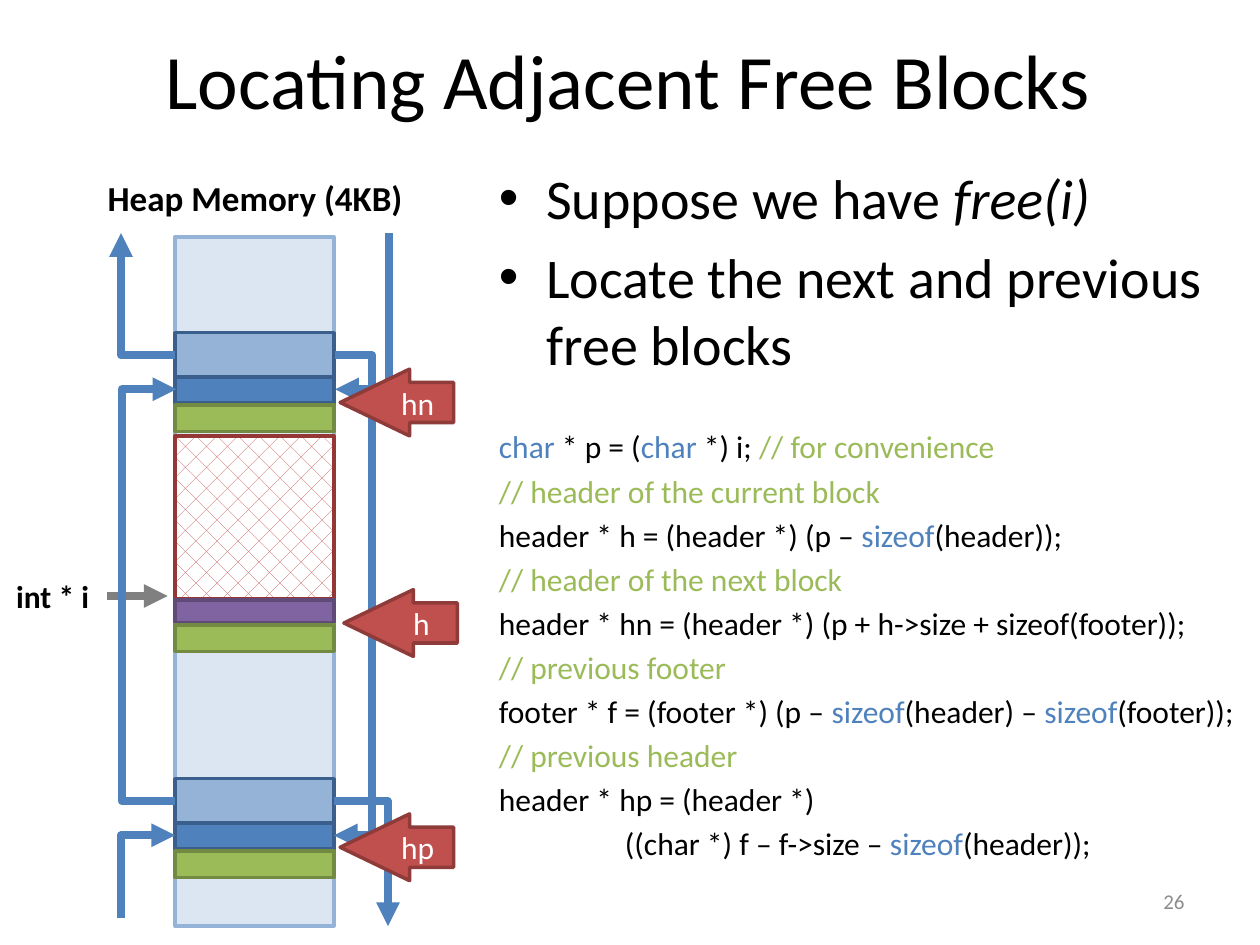
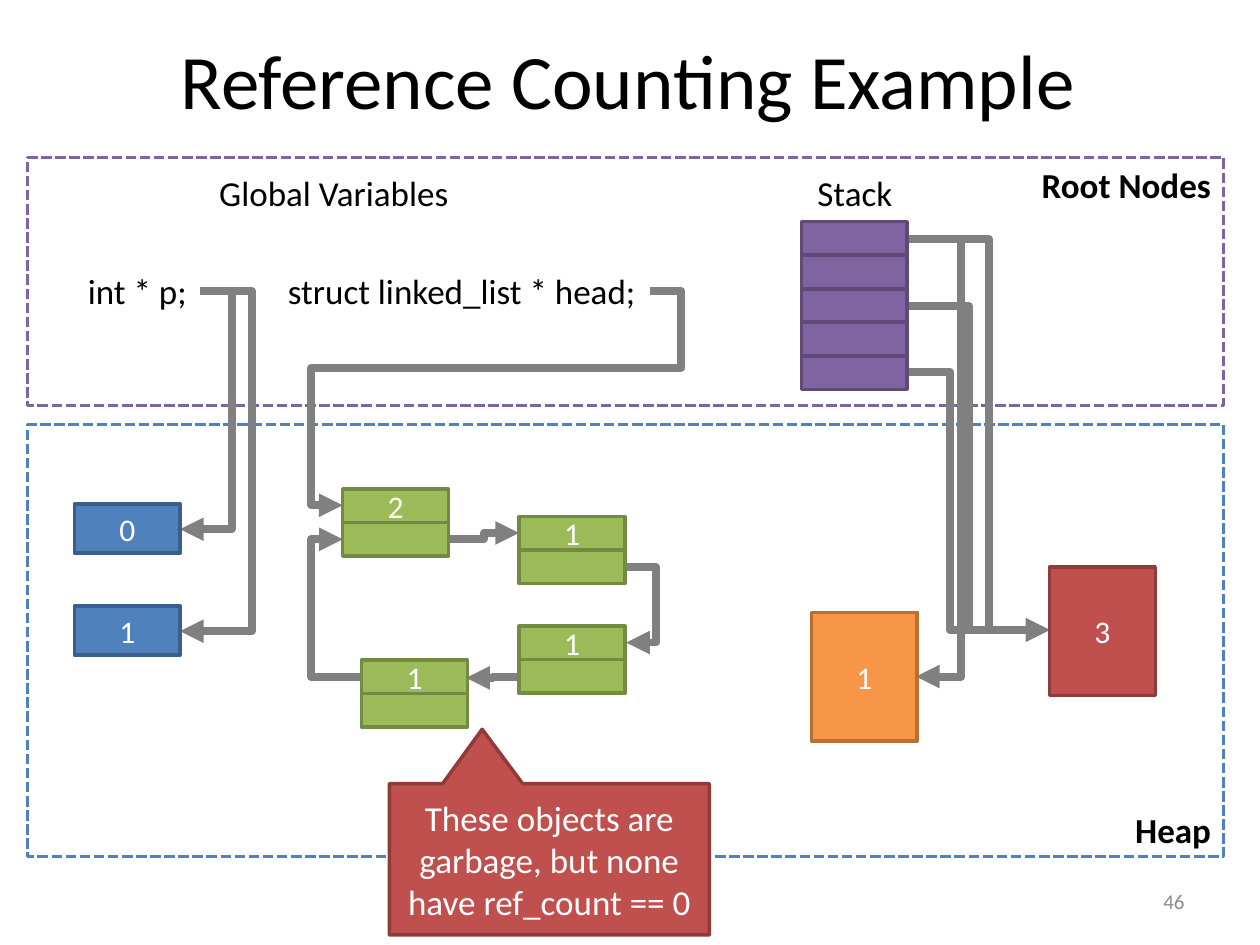
"""Build two slides on heap memory: free blocks and reference counting."""
import dataclasses
import typing

import lxml.etree
import pptx
import pptx.dml.color
import pptx.enum.dml
import pptx.enum.shapes
import pptx.enum.text
import pptx.oxml.ns
import pptx.util

WIDTH, HEIGHT = pptx.util.Inches(10), pptx.util.Inches(7.5)
COL, ROW = WIDTH / 100, HEIGHT / 75
FONT = "Calibri"
COLOURS = {
    "black": "000000", "white": "FFFFFF", "number": "8C8C8C", "grey": "808080",
    "blue": "4F81BD", "blue_edge": "3A5F8C", "light": "95B3D7", "pale": "DCE6F2",
    "green": "9BBB59", "green_edge": "738A42", "purple": "8064A2", "purple_edge": "5F4A78",
    "red": "C0504D", "red_edge": "8E3B39", "used_edge": "953735",
    "orange": "F79646", "orange_edge": "B76F34",
}
SHAPE = pptx.enum.shapes.MSO_SHAPE
ALIGN = pptx.enum.text.PP_ALIGN
ANCHOR = pptx.enum.text.MSO_ANCHOR
Point = tuple[float, float]
Run = tuple[str, str]


@dataclasses.dataclass
class Box:
    """A preset shape placed in grid columns and rows."""
    x: float
    y: float
    w: float
    h: float
    fill: str | None
    edge: str
    text: str = ""
    kind: typing.Any = SHAPE.RECTANGLE
    adj: tuple[float, ...] = ()
    size: int = 18
    dashed: bool = False
    bold: bool = False
    colour: str = "white"
    align: typing.Any = ALIGN.CENTER
    anchor: typing.Any = ANCHOR.MIDDLE


@dataclasses.dataclass
class Label:
    """A line of text placed in grid columns and rows."""
    x: float
    y: float
    w: float
    h: float
    text: str
    size: int = 20
    bold: bool = False
    colour: str = "black"
    align: typing.Any = ALIGN.CENTER
    anchor: typing.Any = ANCHOR.TOP


@dataclasses.dataclass
class Arrow:
    """An arrow through right-angled corner points."""
    points: list[Point]
    colour: str = "grey"


def rgb(name: str) -> pptx.dml.color.RGBColor:
    """Look up a named colour."""
    return pptx.dml.color.RGBColor.from_string(COLOURS[name])


def apply(target: typing.Any, values: dict[str, typing.Any]) -> None:
    """Set each format value on the target."""
    for name, value in values.items():
        setattr(target, name, value)


def place(x: float, y: float, w: float, h: float) -> tuple[int, int, int, int]:
    """Turn grid units into a slide position and size."""
    return int(x * COL), int(y * ROW), int(w * COL), int(h * ROW)


def add_run(p: typing.Any, text: str, size: int, colour: str, **extra: bool) -> None:
    """Add a formatted run to a paragraph."""
    r = p.add_run()
    r.text = text
    apply(r.font, {"name": FONT, "size": pptx.util.Pt(size), **extra})
    r.font.color.rgb = rgb(colour)


def write(sp: typing.Any, item: Box | Label) -> None:
    """Write the text of a box or label."""
    tf = sp.text_frame
    apply(tf, {"word_wrap": isinstance(item, Box), "vertical_anchor": item.anchor})
    p = tf.paragraphs[0]
    p.alignment = item.align
    add_run(p, item.text, item.size, item.colour, bold=item.bold)


def draw_label(s: typing.Any, label: Label) -> None:
    """Draw a text label."""
    write(s.shapes.add_textbox(*place(label.x, label.y, label.w, label.h)), label)


def draw_box(s: typing.Any, box: Box) -> None:
    """Draw a shape with its fill, edge and text."""
    sp = s.shapes.add_shape(box.kind, *place(box.x, box.y, box.w, box.h))
    sp.shadow.inherit = False
    for i, value in enumerate(box.adj):
        sp.adjustments[i] = value
    if box.fill is None:
        sp.fill.background()
    elif box.fill == "used":
        sp.fill.patterned()
        sp.fill.pattern = pptx.enum.dml.MSO_PATTERN.DOTTED_DIAMOND
        sp.fill.fore_color.rgb, sp.fill.back_color.rgb = rgb("red"), rgb("white")
    else:
        sp.fill.solid()
        sp.fill.fore_color.rgb = rgb(box.fill)
    sp.line.color.rgb = rgb(box.edge)
    sp.line.width = pptx.util.Pt(2)
    if box.dashed:
        sp.line.dash_style = pptx.enum.dml.MSO_LINE.SQUARE_DOT
    if box.text:
        write(sp, box)


def draw_arrow(s: typing.Any, arrow: Arrow) -> None:
    """Draw a straight or bent connector ending in an arrowhead."""
    pts, qn = arrow.points, pptx.oxml.ns.qn
    (x1, y1), (x2, y2) = pts[0], pts[-1]
    w, h = x2 - x1, y2 - y1
    legs, turns = len(pts) - 1, 0
    dx, dy = w, h
    if legs == 2 and pts[1][0] == x1:
        turns, dx, dy = 1, h, -w
    elif w < 0 and h < 0:
        turns, dx, dy = 2, -w, -h
    mx, my = (x1 + x2) / 2, (y1 + y2) / 2
    types = pptx.enum.shapes.MSO_CONNECTOR
    c = s.shapes.add_connector(
        types.STRAIGHT if legs == 1 else types.ELBOW,
        *place(mx - dx / 2, my - dy / 2, mx + dx / 2, my + dy / 2))
    c.line.color.rgb = rgb(arrow.colour)
    c.line.width = pptx.util.Pt(4.5)
    pr = c._element.spPr
    if turns:
        pr.find(qn("a:xfrm")).set("rot", str(turns * 5400000))
    if legs > 1:
        geom = pr.find(qn("a:prstGeom"))
        geom.set("prst", f"bentConnector{legs}")
        guides = geom.find(qn("a:avLst"))
        if guides is None:
            guides = lxml.etree.SubElement(geom, qn("a:avLst"))
        for i in range(legs - 2):
            axis = i % 2
            share = (pts[i + 1][axis] - pts[0][axis]) / (w, h)[axis]
            lxml.etree.SubElement(guides, qn("a:gd"), name=f"adj{i + 1}" if legs > 3 else "adj1",
                                  fmla=f"val {round(share * 100000)}")
    lxml.etree.SubElement(pr.find(qn("a:ln")), qn("a:tailEnd"), type="triangle")
    lxml.etree.SubElement(pr, qn("a:effectLst"))


def draw(s: typing.Any, items: list[Box | Label | Arrow]) -> None:
    """Draw the items from back to front."""
    painters = {Box: draw_box, Label: draw_label, Arrow: draw_arrow}
    for item in items:
        painters[type(item)](s, item)


def move(sp: typing.Any, x: float, y: float, w: float, h: float) -> None:
    """Move a placeholder to a grid position."""
    apply(sp, dict(zip(("left", "top", "width", "height"), place(x, y, w, h))))


def new_slide(prs: typing.Any, layout: int, title: str, number: int) -> typing.Any:
    """Add a slide with its title and number."""
    s = prs.slides.add_slide(prs.slide_layouts[layout])
    sp = s.shapes.title
    move(sp, 0.5, 0, 98.7, 12.5)
    sp.text_frame.vertical_anchor = ANCHOR.MIDDLE
    p = sp.text_frame.paragraphs[0]
    p.alignment = ALIGN.CENTER
    add_run(p, title, 44, "black")
    draw_label(s, Label(71.7, 69.5, 23.3, 4, str(number), 12, colour="number",
                        align=ALIGN.RIGHT, anchor=ANCHOR.MIDDLE))
    return s


BULLETS = [[("Suppose we have ", False), ("free(i)", True)],
           [("Locate the next and previous free blocks", False)]]
SIZEOF: Run = ("sizeof", "blue")
CODE: list[list[Run]] = [
    [("char", "blue"), (" * p = (", "black"), ("char", "blue"), (" *) i; ", "black"),
     ("// for convenience", "green")],
    [("// header of the current block", "green")],
    [("header * h = (header *) (p – ", "black"), SIZEOF, ("(header));", "black")],
    [("// header of the next block", "green")],
    [("header * hn = (header *) (p + h->size + sizeof(footer));", "black")],
    [("// previous footer", "green")],
    [("footer * f = (footer *) (p – ", "black"), SIZEOF, ("(header) – ", "black"), SIZEOF,
     ("(footer));", "black")],
    [("// previous header", "green")],
    [("header * hp = (header *)", "black")],
    [("((char *) f – f->size – ", "black"), SIZEOF, ("(header));", "black")],
]


def fill_body(sp: typing.Any) -> None:
    """Fill the body with bullets and the code listing."""
    move(sp, 38.6, 12.5, 61.5, 61)
    tf = sp.text_frame
    tf.auto_size = pptx.enum.text.MSO_AUTO_SIZE.NONE
    for i, runs in enumerate(BULLETS):
        p = tf.add_paragraph() if i else tf.paragraphs[0]
        for text, italic in runs:
            add_run(p, text, 32, "black", italic=italic)
    for i, runs in enumerate(CODE):
        p = tf.add_paragraph()
        pr = p._p.get_or_add_pPr()
        pr.set("marL", str(pptx.util.Inches(1) if runs is CODE[-1] else 0))
        pr.set("indent", "0")
        if i == 0:
            p.space_before = pptx.util.Pt(29)
        lxml.etree.SubElement(pr, pptx.oxml.ns.qn("a:buNone"))
        for text, colour in runs:
            add_run(p, text, 18, colour)


def free_blocks(prs: typing.Any) -> None:
    """Build the slide on locating adjacent free blocks."""
    s = new_slide(prs, 1, "Locating Adjacent Free Blocks", 26)
    fill_body(s.placeholders[1])
    left, wide, right = 13.9, 12.6, 26.5

    def block(y: float, h: float, fill: str, edge: str) -> Box:
        """Describe one block of the heap column."""
        return Box(left, y, wide, h, fill, edge)

    items: list[Box | Label | Arrow] = [
        block(18.8, 54.7, "pale", "light"),
        Label(7.4, 13.5, 25.7, 4.4, "Heap Memory (4KB)", bold=True),
        Label(0.3, 45.3, 8.2, 4, "int * i", 18, True, align=ALIGN.LEFT),
        Arrow([(8.5, 47.3), (13.3, 47.3)]),
        block(34.6, 12.9, "used", "used_edge"),
        block(47.6, 1.8, "purple", "purple_edge"),
        block(49.6, 2.1, "green", "green_edge"),
    ]
    for y in (26.4, 61.8):
        items += [block(y, 3.5, "light", "blue_edge"), block(y + 3.5, 2.1, "blue", "blue_edge"),
                  block(y + 5.75, 2.1, "green", "green_edge")]
    links = [
        [(right, 63.6), (30.8, 63.6), (30.8, 73.5)],
        [(left, 63.6), (9.6, 63.6), (9.6, 30.9), (left + 0.1, 30.9)],
        [(right + 0.1, 28.2), (29.6, 28.2), (29.6, 66.3), (right, 66.3)],
        [(left, 28.2), (9.6, 28.2), (9.6, 18.5)],
        [(9.6, 72.9), (9.6, 66.3), (left, 66.3)],
        [(30.9, 18.5), (30.9, 30.9), (right + 0.1, 30.9)],
    ]
    items += [Arrow(points, "blue") for points in links]
    items += [Box(x, y, 9, 5.3, "red", "red_edge", name, SHAPE.LEFT_ARROW, (0.6, 1.04))
              for x, y, name in ((27.3, 46.8, "h"), (27, 29.3, "hn"), (27, 64.6, "hp"))]
    draw(s, items)


def reference_counting(prs: typing.Any) -> None:
    """Build the slide on reference counting."""
    s = new_slide(prs, 5, "Reference Counting Example", 46)
    wide, cell = 8.4, 2.66
    items: list[Box | Label | Arrow] = [
        Box(2.2, y, 94.9, h, None, edge, text, size=20, dashed=True, bold=True,
            colour="black", align=ALIGN.RIGHT, anchor=anchor)
        for y, h, edge, text, anchor in ((12.5, 19.7, "purple", "Root Nodes", ANCHOR.TOP),
                                         (33.7, 34.3, "blue", "Heap", ANCHOR.BOTTOM))]
    items += [Label(x, y, w, 4.4, text) for x, y, w, text in (
        (63.8, 13.1, 8.1, "Stack"), (16.3, 13.1, 20.4, "Global Variables"),
        (5.9, 20.9, 10, "int * p;"), (21.7, 20.9, 29.9, "struct linked_list * head;"))]
    links = [
        [(51.6, 23.1), (54.1, 23.1), (54.1, 29.2), (24.7, 29.2), (24.7, 40.1), (27.2, 40.1)],
        [(35.6, 42.8), (38.4, 42.8), (38.4, 42.3), (41.2, 42.3)],
        [(49.6, 45), (52.1, 45), (52.1, 51), (49.7, 51)],
        [(41.2, 53.7), (39.1, 53.7), (39.1, 53.8), (37, 53.8)],
        [(28.7, 53.7), (24.7, 53.7), (24.7, 42.8), (27.2, 42.8)],
        [(72, 19), (76.3, 19), (76.3, 53.7), (72.7, 53.7)],
    ]
    links += [[(15.9, 23.1), (x, 23.1), (x, y), (14.3, y)] for x, y in ((18.4, 42), (20, 50.1))]
    links += [[(72, y), (x, y), (x, 50), (83.3, 50)]
              for x, y in ((78.5, 19), (75.4, 29.5), (76.9, 24.3))]
    items += [Arrow(points) for points in links]
    items += [Box(63.6, 17.6 + i * cell, wide, cell, "purple", "purple_edge") for i in range(5)]
    items += [Box(5.9, y, wide, 3.9, "blue", "blue_edge", count)
              for y, count in ((40, "0"), (48.1, "1"))]
    for x, y, count in ((27.2, 38.8, "2"), (41.2, 41, "1"), (41.2, 49.7, "1"), (28.7, 52.4, "1")):
        items += [Box(x, y + i * cell, wide, cell, "green", "green_edge", text)
                  for i, text in enumerate((count, ""))]
    items += [Box(x, y, wide, 10.2, fill, f"{fill}_edge", count)
              for x, y, fill, count in ((83.3, 45, "red", "3"), (64.4, 48.6, "orange", "1"))]
    items.append(Box(30.9, 62.2, 25.4, 12, "red", "red_edge",
                     "These objects are garbage, but none have ref_count == 0",
                     SHAPE.RECTANGULAR_CALLOUT, (-0.21, -0.86), 20))
    draw(s, items)


def main() -> None:
    """Build and save the slides."""
    prs = pptx.Presentation()
    prs.slide_width, prs.slide_height = WIDTH, HEIGHT
    free_blocks(prs)
    reference_counting(prs)
    prs.save("out.pptx")


if __name__ == "__main__":
    main()
